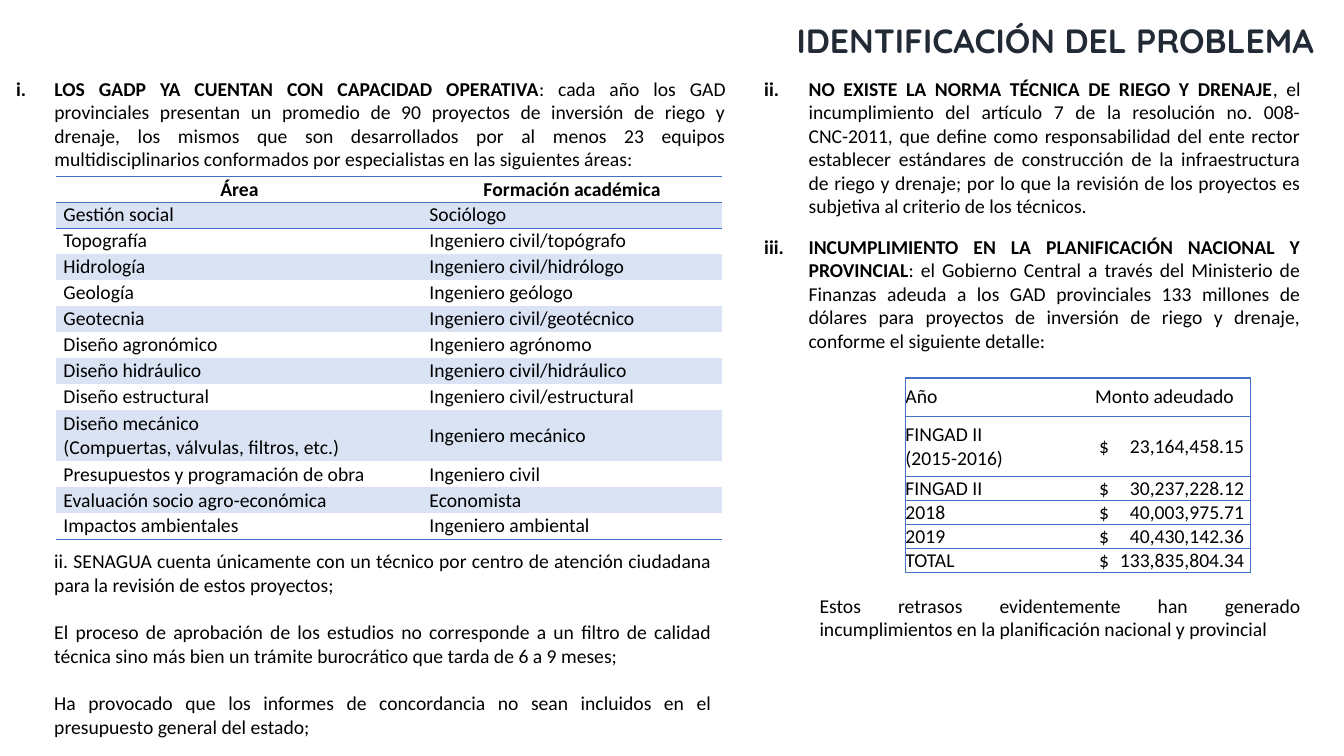
from lxml.etree import SubElement
from pptx import Presentation
from pptx.dml.color import RGBColor
from pptx.enum.text import MSO_ANCHOR, MSO_AUTO_SIZE, PP_ALIGN
from pptx.oxml import parse_xml
from pptx.oxml.ns import nsdecls, qn
from pptx.util import Inches, Pt

WIDE, HIGH = Inches(13.33), Inches(7.5)
BLUE, TINT, WHITE, INK, NAVY = "4472C4", "DAE3F3", "FFFFFF", "000000", "222A35"
PLAIN = "{2D5ABB26-0587-4C30-8999-92F81FD0307C}"  # table style without grid

# Left, top, width, height as percent of the slide
TITLE_BOX = (52.81, 2.53, 45.69, 9.2)
LEFT_BOX = (0.45, 9.47, 54.31, 13.87)
AREA_BOX = (4.2, 23.33, 49.51, 48)
NOTE_BOX = (3.3, 72, 50.41, 26.53)
RIGHT_BOX = (56.11, 9.47, 41.41, 43.47)
DEBT_BOX = (67.37, 50, 25.66, 25.6)
END_BOX = (60.24, 77.87, 37.28, 7.6)

TITLE = "IDENTIFICACIÓN DEL PROBLEMA"
LEFT_LIST = [
    ("LOS GADP YA CUENTAN CON CAPACIDAD OPERATIVA",
     ": cada año los GAD provinciales presentan un promedio de 90 proyectos de "
     "inversión de riego y drenaje, los mismos que son desarrollados por al menos "
     "23 equipos multidisciplinarios conformados por especialistas en las "
     "siguientes áreas:"),
]
RIGHT_LIST = [
    ("NO EXISTE LA NORMA TÉCNICA DE RIEGO Y DRENAJE",
     ", el incumplimiento del artículo 7 de la resolución no. 008-CNC-2011, que "
     "define como responsabilidad del ente rector establecer estándares de "
     "construcción de la infraestructura de riego y drenaje; por lo que la "
     "revisión de los proyectos es subjetiva al criterio de los técnicos."),
    ("INCUMPLIMIENTO EN LA PLANIFICACIÓN NACIONAL Y PROVINCIAL",
     ": el Gobierno Central a través del Ministerio de Finanzas adeuda a los GAD "
     "provinciales 133 millones de dólares para proyectos de inversión de riego y "
     "drenaje, conforme el siguiente detalle:"),
]
AREAS = [
    ("Área", "Formación académica"),
    ("Gestión social", "Sociólogo"),
    ("Topografía", "Ingeniero civil/topógrafo"),
    ("Hidrología", "Ingeniero civil/hidrólogo"),
    ("Geología", "Ingeniero geólogo"),
    ("Geotecnia", "Ingeniero civil/geotécnico"),
    ("Diseño agronómico", "Ingeniero agrónomo"),
    ("Diseño hidráulico", "Ingeniero civil/hidráulico"),
    ("Diseño estructural", "Ingeniero civil/estructural"),
    ("Diseño mecánico\n(Compuertas, válvulas, filtros, etc.)", "Ingeniero mecánico"),
    ("Presupuestos y programación de obra", "Ingeniero civil"),
    ("Evaluación socio agro-económica", "Economista"),
    ("Impactos ambientales", "Ingeniero ambiental"),
]
DEBTS = [
    ("Año", "Monto adeudado"),
    ("FINGAD II\n(2015-2016)", "$\t23,164,458.15"),
    ("FINGAD II", "$\t30,237,228.12"),
    ("2018", "$\t40,003,975.71"),
    ("2019", "$\t40,430,142.36"),
    ("TOTAL", "$\t133,835,804.34"),
]
DEBT_ROWS = [3.8, 6] + [2.35] * 4
NOTES = [
    "ii. SENAGUA cuenta únicamente con un técnico por centro de atención ciudadana "
    "para la revisión de estos proyectos;",
    "El proceso de aprobación de los estudios no corresponde a un filtro de calidad "
    "técnica sino más bien un trámite burocrático que tarda de 6 a 9 meses;",
    "Ha provocado que los informes de concordancia no sean incluidos en el "
    "presupuesto general del estado;",
]
ENDING = ["Estos retrasos evidentemente han generado incumplimientos en la "
          "planificación nacional y provincial"]


def tone(text):
    return RGBColor.from_string(text)


def scale(box):
    """Turn percent of the slide into lengths."""
    return [int(part * side / 100) for part, side in zip(box, (WIDE, HIGH) * 2)]


def place(shape, box):
    shape.left, shape.top, shape.width, shape.height = scale(box)
    frame = shape.text_frame
    frame.word_wrap = True
    frame.auto_size = MSO_AUTO_SIZE.NONE
    frame.vertical_anchor = MSO_ANCHOR.TOP
    return frame


def style(para, align=PP_ALIGN.JUSTIFY, bold=False, size=14, face="Calibri", color=INK):
    para.alignment = align
    for run in para.runs:
        font = run.font
        font.size, font.name, font.bold = Pt(size), face, bold
        font.color.rgb = tone(color)


def fill_list(shape, box, items, start, hang):
    """Write a roman-numbered list with bold leads."""
    frame = place(shape, box)
    for i, (lead, rest) in enumerate(items):
        para = frame.paragraphs[0] if i == 0 else frame.add_paragraph()
        props = para._p.get_or_add_pPr()
        props.set("marL", str(Inches(hang)))
        props.set("indent", str(-Inches(hang)))
        SubElement(props, qn("a:buAutoNum"), type="romanLcPeriod", startAt=str(start))
        para.space_before, para.space_after = Pt(0), Pt(12)
        para.line_spacing = 1.0
        for text in (lead, rest):
            para.add_run().text = text
        style(para)
        para.runs[0].font.bold = True


def add_text(box, lines):
    frame = place(slide.shapes.add_textbox(*scale(box)), box)
    frame.text = "\n".join(lines)
    for i, para in enumerate(frame.paragraphs):
        style(para)
        if i:
            para.space_before = Pt(17)


def add_grid(box, rows, weights, split):
    """Add an unstyled table; split is the first column's share."""
    place4 = scale(box)
    grid = slide.shapes.add_table(len(rows), 2, *place4).table
    grid.first_row = grid.horz_banding = False
    grid._tbl.tblPr.find(qn("a:tableStyleId")).text = PLAIN
    for col, share in zip(grid.columns, (split, 1 - split)):
        col.width = int(place4[2] * share)
    for row, weight in zip(grid.rows, weights):
        row.height = int(place4[3] * weight / sum(weights))
    return grid


def fill_cell(cell, text, color, sides, inset, **look):
    cell.text = text
    cell.vertical_anchor = MSO_ANCHOR.MIDDLE
    cell.margin_left = cell.margin_right = Inches(inset)
    cell.margin_top = cell.margin_bottom = 0
    for para in cell.text_frame.paragraphs:
        style(para, **look)
    cell.fill.solid()
    cell.fill.fore_color.rgb = tone(color)
    for i, side in enumerate(sides):
        line = (f'<a:ln{side} {nsdecls("a")} w="12700"><a:solidFill>'
                f'<a:srgbClr val="{BLUE}"/></a:solidFill></a:ln{side}>')
        cell._tc.tcPr.insert(i, parse_xml(line))


deck = Presentation()
deck.slide_width, deck.slide_height = WIDE, HIGH
slide = deck.slides.add_slide(deck.slide_layouts[3])
title, left, right = slide.placeholders

frame = place(title, TITLE_BOX)
frame.text = TITLE
head = frame.paragraphs[0]
head.line_spacing = 0.9
style(head, PP_ALIGN.RIGHT, True, 24, "Quicksand", NAVY)

fill_list(left, LEFT_BOX, LEFT_LIST, 1, 0.38)
fill_list(right, RIGHT_BOX, RIGHT_LIST, 2, 0.44)

heights = [1 + row[0].count("\n") for row in AREAS]
areas = add_grid(AREA_BOX, AREAS, heights, 0.55)
for r, row in enumerate(AREAS):
    sides = {0: "TB", 1: "T", len(AREAS) - 1: "B"}.get(r, "")
    align = PP_ALIGN.LEFT if r else PP_ALIGN.CENTER
    for c, text in enumerate(row):
        fill_cell(areas.cell(r, c), text, TINT if r % 2 else WHITE, sides, 0.07,
                  align=align, bold=r == 0)

debts = add_grid(DEBT_BOX, DEBTS, DEBT_ROWS, 0.55)
for r, row in enumerate(DEBTS):
    for c, text in enumerate(row):
        cell = debts.cell(r, c)
        fill_cell(cell, text, WHITE, ("LTB", "RTB")[c], 0, align=PP_ALIGN.LEFT)
        if "\t" in text:
            cell.margin_left = Inches(0.04)
            props = cell.text_frame.paragraphs[0]._p.get_or_add_pPr()
            tabs = SubElement(props, qn("a:tabLst"))
            SubElement(tabs, qn("a:tab"), pos=str(Inches(1.44)), algn="r")

add_text(NOTE_BOX, NOTES)
add_text(END_BOX, ENDING)
deck.save("out.pptx")
